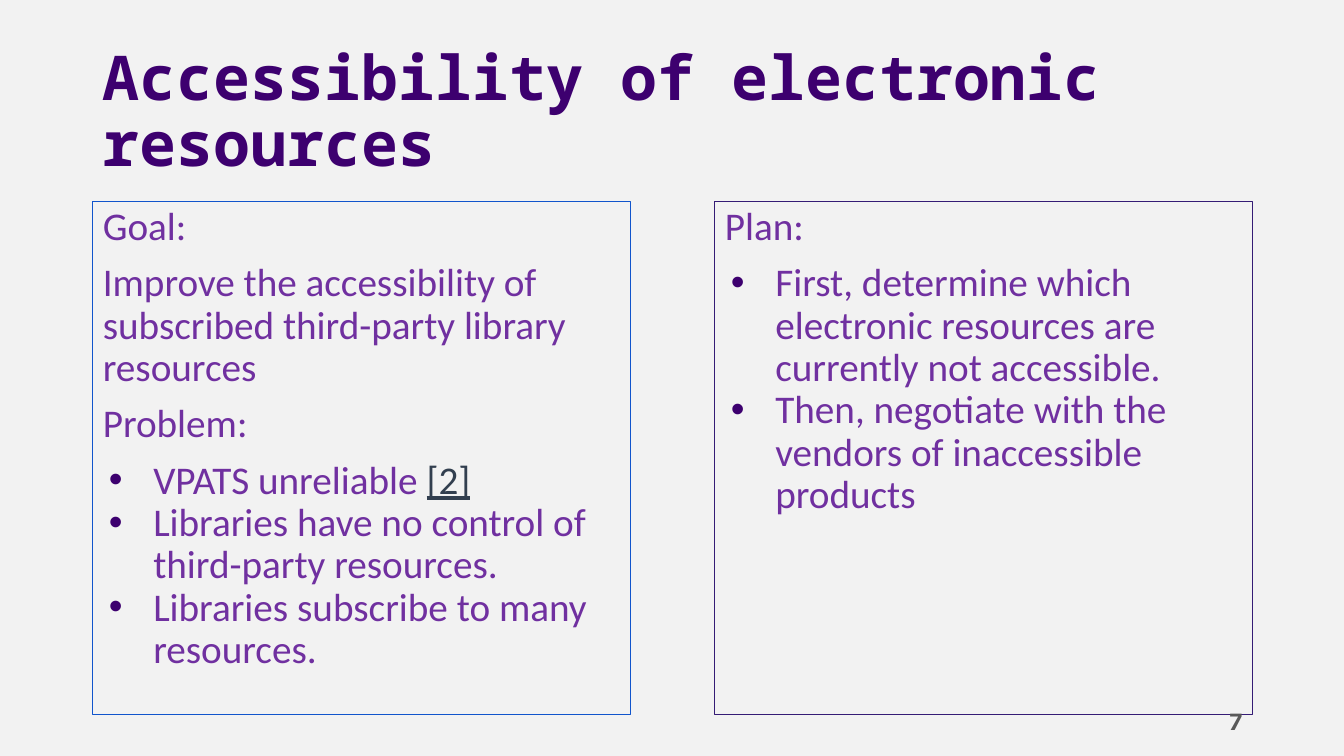
from dataclasses import dataclass

from lxml.etree import SubElement
from pptx import Presentation
from pptx.dml.color import RGBColor
from pptx.enum.text import MSO_ANCHOR as Anchor, MSO_AUTO_SIZE as AutoSize, PP_ALIGN as Align
from pptx.oxml.ns import qn
from pptx.util import Inches, Pt

COLORS = {
    "background": "F2F2F2",
    "title": "3D006F",
    "body": "7030A0",
    "reference": "323F4F",
    "number": "595959",
    "left_border": "1155CC",
    "right_border": "351C75",
}


@dataclass
class Line:
    text: str
    bullet: bool = False
    before: int = 10
    reference: str = ""


@dataclass
class Panel:
    idx: int
    left: float
    border: str
    lines: list[Line]


PANELS = [
    Panel(1, 0.92, "left_border", [
        Line("Goal:"),
        Line("Improve the accessibility of subscribed third-party library resources"),
        Line("Problem:"),
        Line("VPATS unreliable ", bullet=True, reference="[2]"),
        Line("Libraries have no control of third-party resources.", bullet=True, before=0),
        Line("Libraries subscribe to many resources.", bullet=True, before=0),
    ]),
    Panel(2, 7.09, "right_border", [
        Line("Plan:"),
        Line("First, determine which electronic resources are currently not accessible.", bullet=True),
        Line("Then, negotiate with the vendors of inaccessible products", bullet=True, before=0),
    ]),
]


def rgb(name: str) -> RGBColor:
    """Return the named colour."""
    return RGBColor.from_string(COLORS[name])


def add_text(p, text: str, *, size: int = 28, font: str = "Calibri", color: str = "body",
             bold: bool = False, underline: bool = False) -> None:
    """Append a formatted run to a paragraph."""
    r = p.add_run()
    r.text = text
    r.font.size = Pt(size)
    r.font.name = font
    r.font.bold = bold
    r.font.underline = underline
    r.font.color.rgb = rgb(color)


def place(sp, left: float, top: float, width: float, height: float, anchor: Anchor):
    """Position a shape and return its prepared text frame."""
    sp.left, sp.top, sp.width, sp.height = map(Inches, (left, top, width, height))
    tf = sp.text_frame
    tf.word_wrap = True
    tf.auto_size = AutoSize.NONE
    tf.vertical_anchor = anchor
    return tf


def set_bullet(p, bullet: bool) -> None:
    """Give a paragraph its indent and bullet, or remove both."""
    pPr = p._p.get_or_add_pPr()
    pPr.set("marL", str(Inches(0.5 if bullet else 0)))
    pPr.set("indent", str(Inches(-0.44 if bullet else 0)))
    if bullet:
        SubElement(SubElement(pPr, qn("a:buClr")), qn("a:srgbClr"), val=COLORS["title"])
        SubElement(pPr, qn("a:buFont"), typeface="Arial")
        SubElement(pPr, qn("a:buChar"), char="•")
    else:
        SubElement(pPr, qn("a:buNone"))


def draw_panel(s, panel: Panel) -> None:
    """Fill a body placeholder with a bordered list."""
    sp = s.placeholders[panel.idx]
    tf = place(sp, panel.left, 2, 5.33, 5.09, Anchor.TOP)
    sp.line.color.rgb = rgb(panel.border)
    sp.line.width = Pt(0.75)
    for i, line in enumerate(panel.lines):
        p = tf.add_paragraph() if i else tf.paragraphs[0]
        p.line_spacing = 0.9
        p.space_before = Pt(line.before)
        set_bullet(p, line.bullet)
        add_text(p, line.text)
        if line.reference:
            add_text(p, line.reference, color="reference", underline=True)


def main() -> None:
    """Build and save the slide."""
    prs = Presentation()
    prs.slide_width, prs.slide_height = Inches(13.33), Inches(7.5)
    s = prs.slides.add_slide(prs.slide_layouts[3])
    s.background.fill.solid()
    s.background.fill.fore_color.rgb = rgb("background")

    p = place(s.shapes.title, 0.92, 0.4, 11.5, 1.45, Anchor.MIDDLE).paragraphs[0]
    p.alignment = Align.LEFT
    p.line_spacing = 0.9
    add_text(p, "Accessibility of electronic resources", size=44, font="Noto Sans Mono",
             color="title", bold=True)

    for panel in PANELS:
        draw_panel(s, panel)

    box = s.shapes.add_textbox(0, 0, 0, 0)
    p = place(box, 10.96, 6.95, 1.46, 0.4, Anchor.MIDDLE).paragraphs[0]
    p.alignment = Align.RIGHT
    add_text(p, "7", size=18, font="Karla", color="number", bold=True)

    prs.save("out.pptx")


if __name__ == "__main__":
    main()
